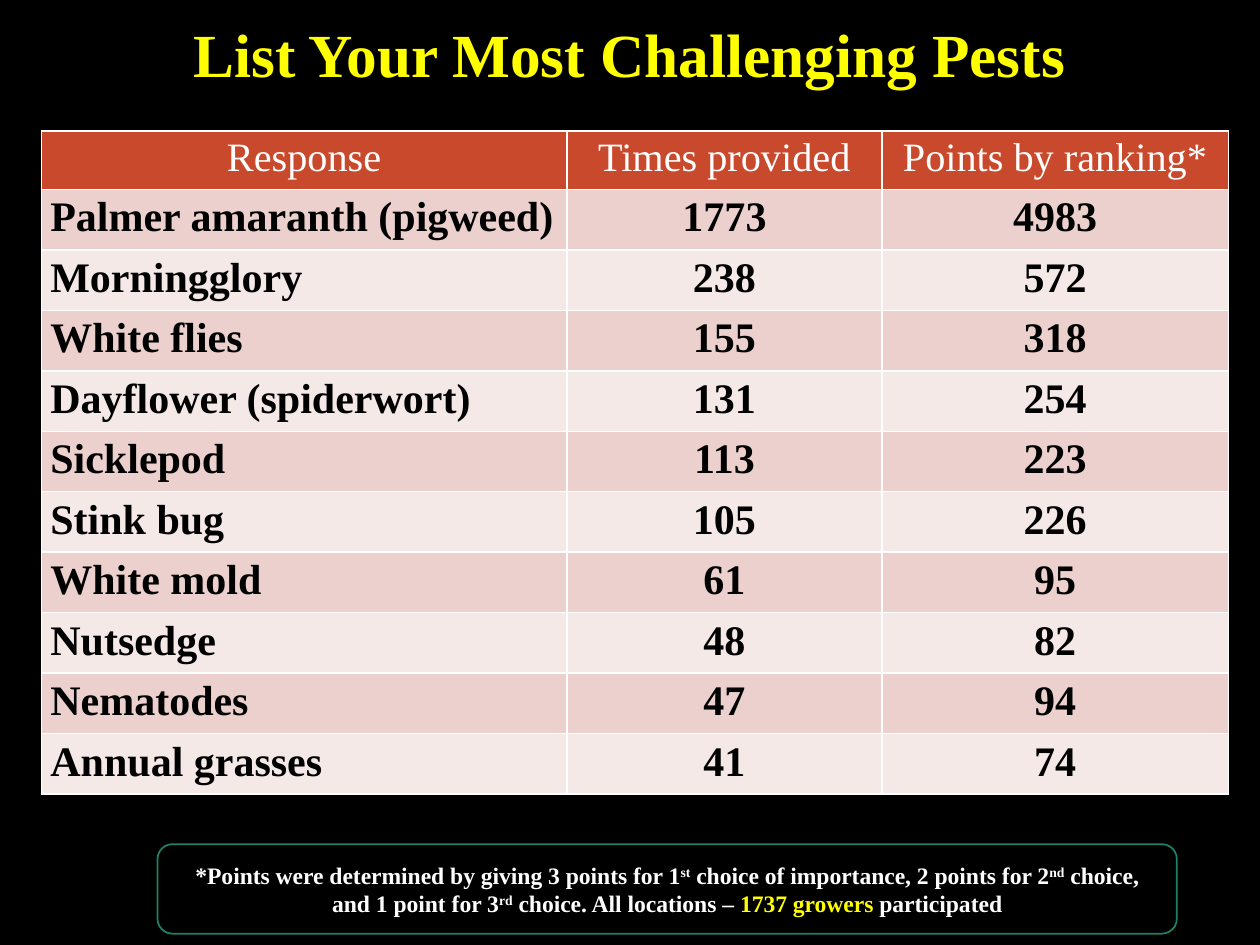
import pptx
import pptx.dml.color
import pptx.enum.shapes
import pptx.enum.text
import pptx.util

Inches = pptx.util.Inches
Pt = pptx.util.Pt
RGBColor = pptx.dml.color.RGBColor
PP_ALIGN = pptx.enum.text.PP_ALIGN
MIDDLE = pptx.enum.text.MSO_ANCHOR.MIDDLE

BLACK = RGBColor(0x00, 0x00, 0x00)
WHITE = RGBColor(0xFF, 0xFF, 0xFF)
YELLOW = RGBColor(0xFF, 0xFF, 0x00)
GREEN = RGBColor(0x1E, 0x81, 0x68)
HEADER_RED = RGBColor(0xC9, 0x49, 0x2C)
BAND_DARK = RGBColor(0xEB, 0xD0, 0xCD)
BAND_LIGHT = RGBColor(0xF5, 0xE9, 0xE8)

HEADINGS = ("Response", "Times provided", "Points by ranking*")
PESTS = (
    ("Palmer amaranth (pigweed)", 1773, 4983),
    ("Morningglory", 238, 572),
    ("White flies", 155, 318),
    ("Dayflower (spiderwort)", 131, 254),
    ("Sicklepod", 113, 223),
    ("Stink bug", 105, 226),
    ("White mold", 61, 95),
    ("Nutsedge", 48, 82),
    ("Nematodes", 47, 94),
    ("Annual grasses", 41, 74),
)
COLUMN_WIDTHS = (4.17, 2.5, 2.75)
HEADER_HEIGHT, ROW_HEIGHT = 0.45, 0.38

# Text, colour, superscript
FOOTNOTE = (
    ("*Points were determined by giving 3 points for 1", WHITE, False),
    ("st", WHITE, True),
    (" choice of importance, 2 points for 2", WHITE, False),
    ("nd", WHITE, True),
    (" choice, and 1 point for 3", WHITE, False),
    ("rd", WHITE, True),
    (" choice. All locations – ", WHITE, False),
    ("1737 growers ", YELLOW, False),
    ("participated", WHITE, False),
)


def style_paragraph(paragraph, size, color=None, bold=True, align=PP_ALIGN.CENTER):
    paragraph.alignment = align
    paragraph.font.name = "Times New Roman"
    paragraph.font.size = Pt(size)
    paragraph.font.bold = bold
    if color is not None:
        paragraph.font.color.rgb = color


def add_title(slide, left, top, width, height):
    title = slide.shapes.add_textbox(left, top, width, height).text_frame
    title.word_wrap = True
    title.vertical_anchor = MIDDLE
    heading = title.paragraphs[0]
    heading.text = "List Your Most Challenging Pests"
    heading.line_spacing = 0.9
    style_paragraph(heading, 35, YELLOW)


def fill_cell(cell, text, fill, size, color, bold, align):
    cell.fill.solid()
    cell.fill.fore_color.rgb = fill
    cell.margin_left = cell.margin_right = Inches(0.07)
    cell.margin_top = cell.margin_bottom = Inches(0.04)
    cell.text = str(text)
    style_paragraph(cell.text_frame.paragraphs[0], size, color, bold, align)


def add_pest_table(slide, left, top, width, height):
    table = slide.shapes.add_table(
        len(PESTS) + 1, len(HEADINGS), left, top, width, height).table
    for column, column_width in zip(table.columns, COLUMN_WIDTHS):
        column.width = Inches(column_width)
    for index, row in enumerate(table.rows):
        row.height = Inches(ROW_HEIGHT if index else HEADER_HEIGHT)

    for col, heading in enumerate(HEADINGS):
        fill_cell(table.cell(0, col), heading, HEADER_RED, 23, WHITE, False,
                  PP_ALIGN.CENTER)
    for row, pest in enumerate(PESTS, start=1):
        band = BAND_DARK if row % 2 else BAND_LIGHT
        for col, value in enumerate(pest):
            align = PP_ALIGN.CENTER if col else PP_ALIGN.LEFT
            fill_cell(table.cell(row, col), value, band, 24, BLACK, True, align)


def add_footnote(slide, left, top, width, height):
    box = slide.shapes.add_shape(
        pptx.enum.shapes.MSO_SHAPE.ROUNDED_RECTANGLE, left, top, width, height)
    box.shadow.inherit = False
    box.fill.solid()
    box.fill.fore_color.rgb = BLACK
    box.line.color.rgb = GREEN
    box.line.width = Pt(1)
    box.text_frame.word_wrap = True
    box.text_frame.vertical_anchor = MIDDLE
    note = box.text_frame.paragraphs[0]
    style_paragraph(note, 13.5)
    for text, color, superscript in FOOTNOTE:
        run = note.add_run()
        run.text = text
        run.font.color.rgb = color
        if superscript:
            run.font._element.set("baseline", "30000")


def main():
    presentation = pptx.Presentation()
    presentation.slide_width = Inches(10)
    presentation.slide_height = Inches(7.5)
    slide = presentation.slides.add_slide(presentation.slide_layouts[6])
    slide.background.fill.solid()
    slide.background.fill.fore_color.rgb = BLACK

    add_title(slide, Inches(0), Inches(0.25), Inches(10), Inches(0.41))
    add_pest_table(slide, Inches(0.33), Inches(1.04), Inches(9.42), Inches(4.25))
    add_footnote(slide, Inches(1.25), Inches(6.7), Inches(8.09), Inches(0.71))
    presentation.save("out.pptx")


if __name__ == "__main__":
    main()
